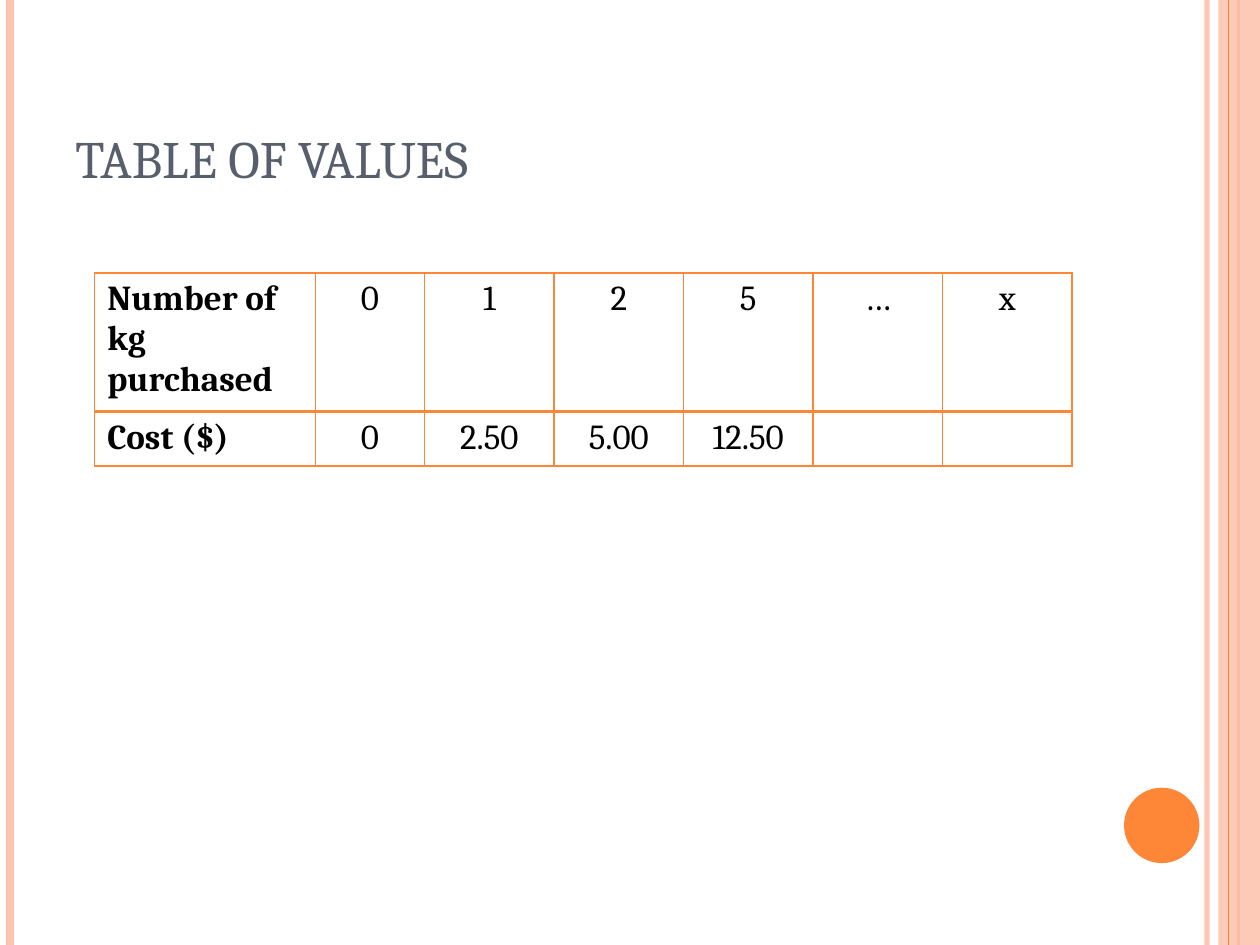
from lxml.etree import SubElement
from pptx import Presentation
from pptx.dml.color import RGBColor
from pptx.enum.shapes import MSO_CONNECTOR, MSO_SHAPE
from pptx.enum.text import MSO_ANCHOR, PP_ALIGN
from pptx.oxml.ns import qn
from pptx.util import Cm, Pt


def color(code):
    return RGBColor.from_string(code)


def write(frame, text, size=20, ink="000000", bold=False, align=PP_ALIGN.LEFT):
    para = frame.paragraphs[0]
    para.alignment = align
    span = para.add_run()
    span.text = text
    span.font.name = "Cambria"
    span.font.size = Pt(size)
    span.font.bold = bold
    span.font.color.rgb = color(ink)


ORANGE = "FE8637"
PEACH = "FEC3AE"

deck = Presentation()
deck.slide_width = Cm(25.4)
deck.slide_height = Cm(19.05)
page = deck.slides.add_slide(deck.slide_layouts[6])

stripes = [
    ("line", 24.33, 3, PEACH, 93),
    ("line", 0.2, 4.5, PEACH, 100),
    ("line", 24.97, 1.5, ORANGE, 100),
    ("band", 24.56, 0.84, PEACH, 87),
    ("line", 24.77, 0.75, ORANGE, 100),
]
for kind, left, width, tone, opacity in stripes:
    if kind == "line":
        stripe = page.shapes.add_connector(
            MSO_CONNECTOR.STRAIGHT, Cm(left), Cm(0), Cm(left), deck.slide_height)
        stripe.line.width = Pt(width)
        fill = stripe.line.fill
    else:
        stripe = page.shapes.add_shape(
            MSO_SHAPE.RECTANGLE, Cm(left), Cm(0), Cm(width), deck.slide_height)
        stripe.shadow.inherit = False
        stripe.line.fill.background()
        fill = stripe.fill
    fill.solid()
    fill.fore_color.rgb = color(tone)
    if kind == "line":
        SubElement(stripe.element.spPr, qn("a:effectLst"))
    if opacity < 100:
        for swatch in stripe.element.spPr.iter(qn("a:srgbClr")):
            SubElement(swatch, qn("a:alpha"), val=str(opacity * 1000))

circle = page.shapes.add_shape(MSO_SHAPE.OVAL, Cm(22.66), Cm(15.88), Cm(1.52), Cm(1.52))
circle.shadow.inherit = False
circle.fill.solid()
circle.fill.fore_color.rgb = color(ORANGE)
circle.line.fill.background()

title = page.shapes.add_textbox(Cm(1.27), Cm(0.76), Cm(20.75), Cm(3.18))
title.text_frame.word_wrap = True
title.text_frame.vertical_anchor = MSO_ANCHOR.BOTTOM
write(title.text_frame, "TABLE OF VALUES", size=30, ink="575F6D")

values = [
    ["Number of kg purchased", "0", "1", "2", "5", "…", "x"],
    ["Cost ($)", "0", "2.50", "5.00", "12.50", "", ""],
]
widths = [4.45, 2.2] + [2.61] * 5
heights = [2.7, 1.05]
table = page.shapes.add_table(
    len(heights), len(widths), Cm(1.91), Cm(5.5), Cm(sum(widths)), Cm(sum(heights))).table
for column, width in zip(table.columns, widths):
    column.width = Cm(width)
for row, height in zip(table.rows, heights):
    row.height = Cm(height)

for row, texts in enumerate(values):
    for column, text in enumerate(texts):
        cell = table.cell(row, column)
        if text:
            write(cell.text_frame, text, bold=column == 0,
                  align=PP_ALIGN.CENTER if column else PP_ALIGN.LEFT)
        properties = cell._tc.get_or_add_tcPr()
        middle = "lnT" if row else "lnB"
        for side in ("lnL", "lnR", "lnT", "lnB"):
            weight = Pt(2 if side == middle else 1)
            border = SubElement(properties, qn(f"a:{side}"), w=str(weight))
            paint = SubElement(border, qn("a:solidFill"))
            SubElement(paint, qn("a:srgbClr"), val=ORANGE)
        cell.fill.background()

deck.save("out.pptx")
